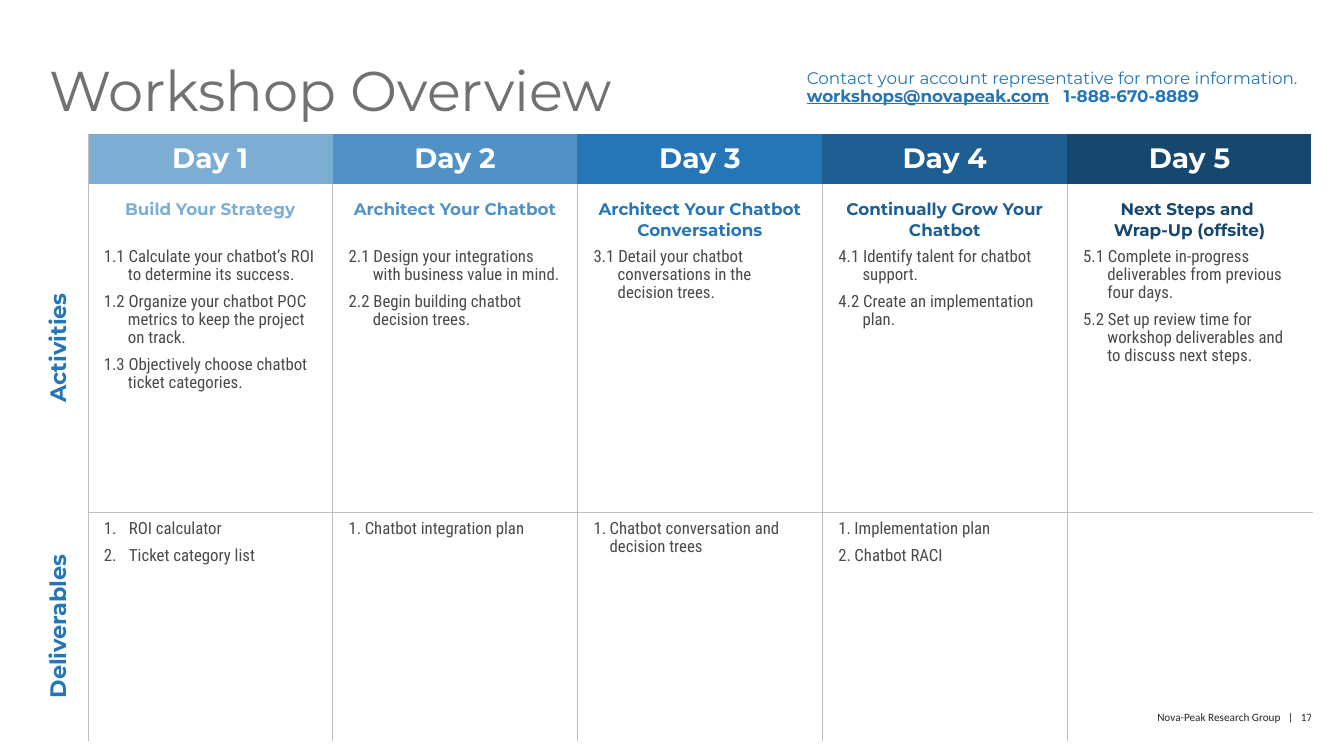
from lxml import etree
from pptx import Presentation
from pptx.dml.color import RGBColor
from pptx.enum.text import MSO_ANCHOR, PP_ALIGN
from pptx.oxml.ns import qn
from pptx.util import Pt

CENTER, LEFT, RIGHT = PP_ALIGN.CENTER, PP_ALIGN.LEFT, PP_ALIGN.RIGHT
TOP, MIDDLE = MSO_ANCHOR.TOP, MSO_ANCHOR.MIDDLE
HEADING_FONT, BODY_FONT, FOOTER_FONT = "Montserrat", "Roboto Condensed", "Calibri"
BLUE, TEXT_GRAY, TITLE_GRAY, GRID_GRAY = "2576B7", "4A4A4A", "717171", "BFBFBF"
NO_TABLE_STYLE = "{2D5ABB26-0587-4C30-8999-92F81FD0307C}"

TITLE = "Workshop Overview"
CONTACT = [
    ("Contact your account representative for more information.", False, False),
    ("workshops@novapeak.com", True, True),
    ("   1-888-670-8889", True, False),
]
FOOTER = "Nova-Peak Research Group   |   17"
DAYS = [
    ("Day 1", "7CAED4", "Build Your Strategy",
     ["1.1 Calculate your chatbot’s ROI to determine its success.",
      "1.2 Organize your chatbot POC metrics to keep the project on track.",
      "1.3 Objectively choose chatbot ticket categories."],
     ["ROI calculator", "Ticket category list"], 18),
    ("Day 2", "5191C5", "Architect Your Chatbot",
     ["2.1 Design your integrations with business value in mind.",
      "2.2 Begin building chatbot decision trees."],
     ["Chatbot integration plan"], 11.5),
    ("Day 3", "2576B7", "Architect Your Chatbot Conversations",
     ["3.1 Detail your chatbot conversations in the decision trees."],
     ["Chatbot conversation and decision trees"], 11.5),
    ("Day 4", "1E5E92", "Continually Grow Your Chatbot",
     ["4.1 Identify talent for chatbot support.",
      "4.2 Create an implementation plan."],
     ["Implementation plan", "Chatbot RACI"], 11.5),
    ("Day 5", "16476E", "Next Steps and \vWrap-Up (offsite)",
     ["5.1 Complete in-progress deliverables from previous four days.",
      "5.2 Set up review time for workshop deliverables and to discuss next steps."],
     [], 11.5),
]
ROW_LABELS = {1: "Activities", 3: "Deliverables"}
COLUMN_WIDTHS = [34.5] + [175] * len(DAYS)
ROW_HEIGHTS = [35.3, 39.6, 194.4, 133.2]
LAST_COLUMN = len(DAYS)


def color(value):
    return RGBColor.from_string(value)


def format_runs(paragraph, font, size, text_color, bold=False):
    for run in paragraph.runs:
        run.font.name = font
        run.font.size = Pt(size)
        run.font.color.rgb = color(text_color)
        run.font.bold = bold


def set_margins(frame, left, top, right, bottom):
    frame.margin_left, frame.margin_top = Pt(left), Pt(top)
    frame.margin_right, frame.margin_bottom = Pt(right), Pt(bottom)


def set_indent(paragraph, margin, indent):
    properties = paragraph._p.get_or_add_pPr()
    properties.set("marL", str(Pt(margin)))
    properties.set("indent", str(Pt(indent)))
    return properties


def add_text_box(slide, left, top, width, height):
    frame = slide.shapes.add_textbox(Pt(left), Pt(top), Pt(width), Pt(height)).text_frame
    frame.word_wrap = True
    return frame


def set_borders(cell, row, column):
    inside = row > 0 and column > 0
    gray = (GRID_GRAY, 0.25)
    right = ("FFFFFF", 1.5) if column == LAST_COLUMN else gray if row or not column else None
    sides = {
        "lnL": gray if inside or column == 1 else None,
        "lnR": right,
        "lnT": gray if inside and row == 3 else None,
        "lnB": gray if inside and row == 2 else None,
    }
    properties = cell._tc.get_or_add_tcPr()
    for side, border in sides.items():
        line = etree.SubElement(properties, qn("a:" + side))
        if border:
            line.set("w", str(Pt(border[1])))
            fill = etree.SubElement(line, qn("a:solidFill"))
            etree.SubElement(fill, qn("a:srgbClr")).set("val", border[0])
        else:
            line.set("w", "0")
            etree.SubElement(line, qn("a:noFill"))


def fill_heading(cell, text, size, text_color):
    paragraph = cell.text_frame.paragraphs[0]
    paragraph.text = text
    paragraph.alignment = CENTER
    format_runs(paragraph, HEADING_FONT, size, text_color, True)
    return paragraph


def fill_list(cell, items, margin, indent, numbered):
    set_margins(cell, 11.5, 5.8, 11.5, 8.6)
    if not items:
        return
    cell.text_frame.text = "\n".join(items)
    for paragraph in cell.text_frame.paragraphs:
        paragraph.line_spacing = Pt(13)
        paragraph.space_before = Pt(6)
        properties = set_indent(paragraph, margin, indent)
        if numbered:
            etree.SubElement(properties, qn("a:buAutoNum")).set("type", "arabicPeriod")
        format_runs(paragraph, BODY_FONT, 12, TEXT_GRAY)


def add_footer(slide):
    frame = add_text_box(slide, 693.4, 507.6, 270.7, 9.4)
    set_margins(frame, 0, 0, 26, 0)
    frame.text = FOOTER
    frame.paragraphs[0].alignment = RIGHT
    format_runs(frame.paragraphs[0], FOOTER_FONT, 8, "242424")


def add_title(slide):
    title = slide.shapes.title
    title.left, title.top, title.width, title.height = Pt(28), Pt(41.8), Pt(679), Pt(42.5)
    frame = title.text_frame
    frame.text = TITLE
    frame.vertical_anchor = TOP
    paragraph = frame.paragraphs[0]
    paragraph.alignment = LEFT
    paragraph.line_spacing = 0.9
    format_runs(paragraph, HEADING_FONT, 40, TITLE_GRAY)


def add_schedule(slide):
    graphic = slide.shapes.add_table(
        len(ROW_HEIGHTS), len(COLUMN_WIDTHS), Pt(28.2), Pt(95.8),
        Pt(sum(COLUMN_WIDTHS)), Pt(sum(ROW_HEIGHTS)))
    table = graphic.table
    table.first_row = table.horz_banding = False
    table._tbl.tblPr.find(qn("a:tableStyleId")).text = NO_TABLE_STYLE
    for column, width in enumerate(COLUMN_WIDTHS):
        table.columns[column].width = Pt(width)
    for row, height in enumerate(ROW_HEIGHTS):
        table.rows[row].height = Pt(height)
        for column in range(len(COLUMN_WIDTHS)):
            cell = table.cell(row, column)
            set_borders(cell, row, column)
            cell.fill.background()
    table.cell(1, 0).merge(table.cell(2, 0))

    for row, label in ROW_LABELS.items():
        cell = table.cell(row, 0)
        cell.vertical_anchor = MIDDLE
        cell._tc.get_or_add_tcPr().set("vert", "vert270")
        paragraph = fill_heading(cell, label, 16, BLUE)
        paragraph.space_after = Pt(5)
        set_indent(paragraph, 17.3, -36)

    for column, (day, shade, theme, activities, deliverables, number_width) in enumerate(DAYS, 1):
        header, subject, tasks, results = [table.cell(row, column) for row in range(4)]
        header.fill.solid()
        header.fill.fore_color.rgb = color(shade)
        header.vertical_anchor = MIDDLE
        fill_heading(header, day, 20, "FFFFFF")
        set_margins(subject, 8.6, 11.5, 8.6, 0)
        fill_heading(subject, theme, 12, shade)
        fill_list(tasks, activities, 17.3, -36, False)
        fill_list(results, deliverables, number_width, -number_width, True)


def add_contact(slide):
    frame = add_text_box(slide, 569.5, 46.1, 366.5, 34.6)
    paragraph = frame.paragraphs[0]
    paragraph.line_spacing = 0.9
    for index, (text, bold, underline) in enumerate(CONTACT):
        if index == 1:
            paragraph.add_line_break()
        run = paragraph.add_run()
        run.text = text
        run.font.underline = underline
    format_runs(paragraph, HEADING_FONT, 12, BLUE)
    for run, (text, bold, underline) in zip(paragraph.runs, CONTACT):
        run.font.bold = bold


def main():
    presentation = Presentation()
    presentation.slide_width, presentation.slide_height = Pt(960.5), Pt(540)
    slide = presentation.slides.add_slide(presentation.slide_layouts[5])
    add_footer(slide)
    add_title(slide)
    add_schedule(slide)
    add_contact(slide)
    presentation.save("out.pptx")


if __name__ == "__main__":
    main()
